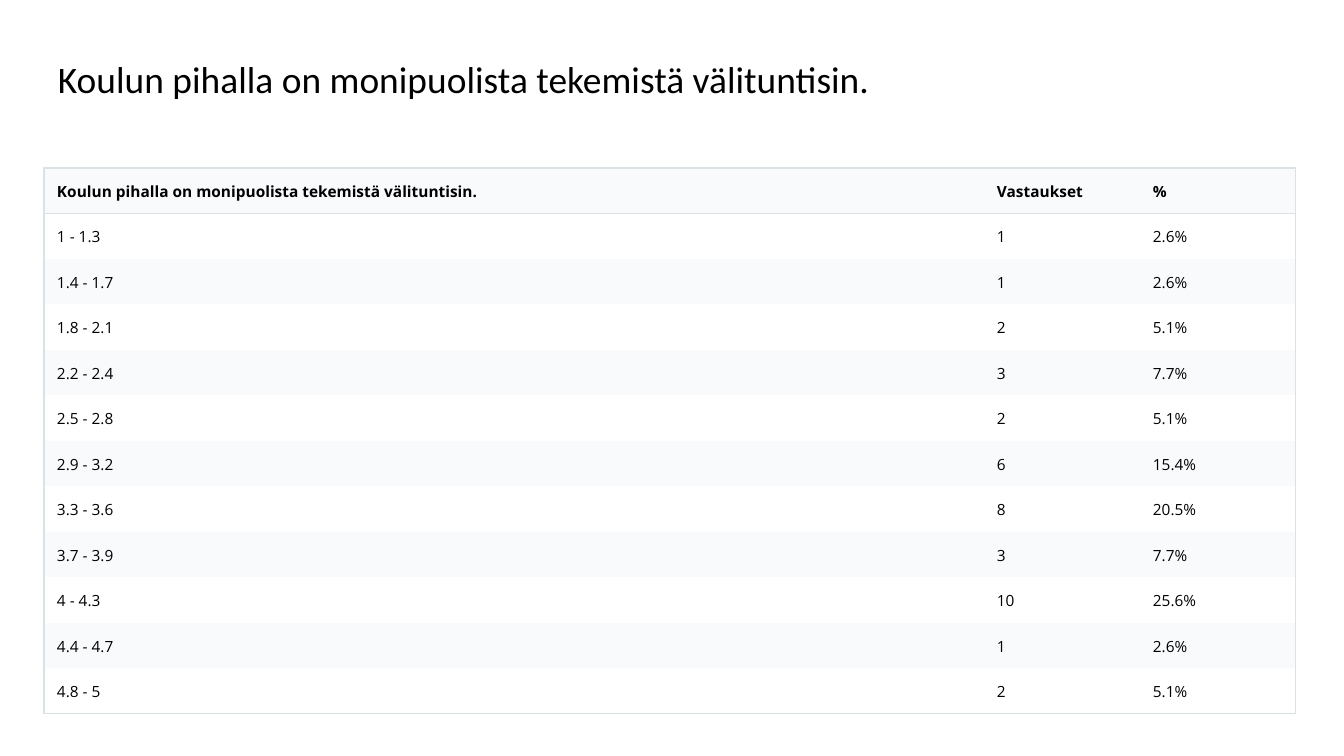
from lxml import etree
from pptx import Presentation, util as u
from pptx.dml.color import RGBColor
from pptx.enum import text
from pptx.oxml.ns import qn

TITLE = "Koulun pihalla on monipuolista tekemistä välituntisin."
ROWS = [
    (TITLE, "Vastaukset", "%"),
    ("1 - 1.3", "1", "2.6%"),
    ("1.4 - 1.7", "1", "2.6%"),
    ("1.8 - 2.1", "2", "5.1%"),
    ("2.2 - 2.4", "3", "7.7%"),
    ("2.5 - 2.8", "2", "5.1%"),
    ("2.9 - 3.2", "6", "15.4%"),
    ("3.3 - 3.6", "8", "20.5%"),
    ("3.7 - 3.9", "3", "7.7%"),
    ("4 - 4.3", "10", "25.6%"),
    ("4.4 - 4.7", "1", "2.6%"),
    ("4.8 - 5", "2", "5.1%"),
]
COLORS = {"text": "000000", "band": "F9FAFB", "plain": "FFFFFF", "border": "DAE2E5"}
COLUMN_WIDTHS = (940, 156, 156)
ROW_HEIGHT = 44


def px(length):
    return u.Emu(round(length * 914400 / 100.8))


def color(name):
    return RGBColor.from_string(COLORS[name])


def style_font(paragraph, name, size, bold=False):
    font = paragraph.runs[0].font
    font.name, font.size, font.bold = name, u.Pt(size), bold
    font.color.rgb = color("text")


def set_margins(box):
    box.margin_left = box.margin_right = box.margin_top = px(13)
    box.margin_bottom = px(14)


def set_borders(cell, visible):
    """Draw the named sides (L, R, T, B) and clear the others."""
    properties = cell._tc.get_or_add_tcPr()
    for side in "LRTB":
        line = etree.SubElement(properties, qn(f"a:ln{side}"), w=str(u.Pt(1)))
        if side in visible:
            fill = etree.SubElement(line, qn("a:solidFill"))
            etree.SubElement(fill, qn("a:srgbClr"), val=COLORS["border"])
        else:
            etree.SubElement(line, qn("a:noFill"))


def add_title(slide):
    frame = slide.shapes.add_textbox(px(45), px(39), px(1252), px(85)).text_frame
    frame.word_wrap = True
    frame.vertical_anchor = text.MSO_ANCHOR.MIDDLE
    set_margins(frame)
    frame.text = TITLE
    frame.paragraphs[0].line_spacing = 0.9
    style_font(frame.paragraphs[0], "Calibri", 26.7)


def add_answers(slide):
    last_row, last_column = len(ROWS) - 1, len(COLUMN_WIDTHS) - 1
    table = slide.shapes.add_table(
        len(ROWS), len(COLUMN_WIDTHS), px(44), px(168),
        px(sum(COLUMN_WIDTHS)), px(ROW_HEIGHT * len(ROWS))).table
    table.horz_banding = False
    for column, width in zip(table.columns, COLUMN_WIDTHS):
        column.width = px(width)
    for i, values in enumerate(ROWS):
        table.rows[i].height = px(ROW_HEIGHT)
        for j, value in enumerate(values):
            cell = table.cell(i, j)
            sides = {"L": j == 0, "R": j == last_column,
                     "T": i <= 1, "B": i in (0, last_row)}
            set_borders(cell, [side for side, shown in sides.items() if shown])
            cell.fill.solid()
            cell.fill.fore_color.rgb = color("plain" if i % 2 else "band")
            set_margins(cell)
            cell.text_frame.text = value
            style_font(cell.text_frame.paragraphs[0], "Open Sans", 11, bold=i == 0)


def main():
    presentation = Presentation()
    presentation.slide_width, presentation.slide_height = px(1344), px(756)
    slide = presentation.slides.add_slide(presentation.slide_layouts[6])
    add_title(slide)
    add_answers(slide)
    presentation.save("out.pptx")


if __name__ == "__main__":
    main()
